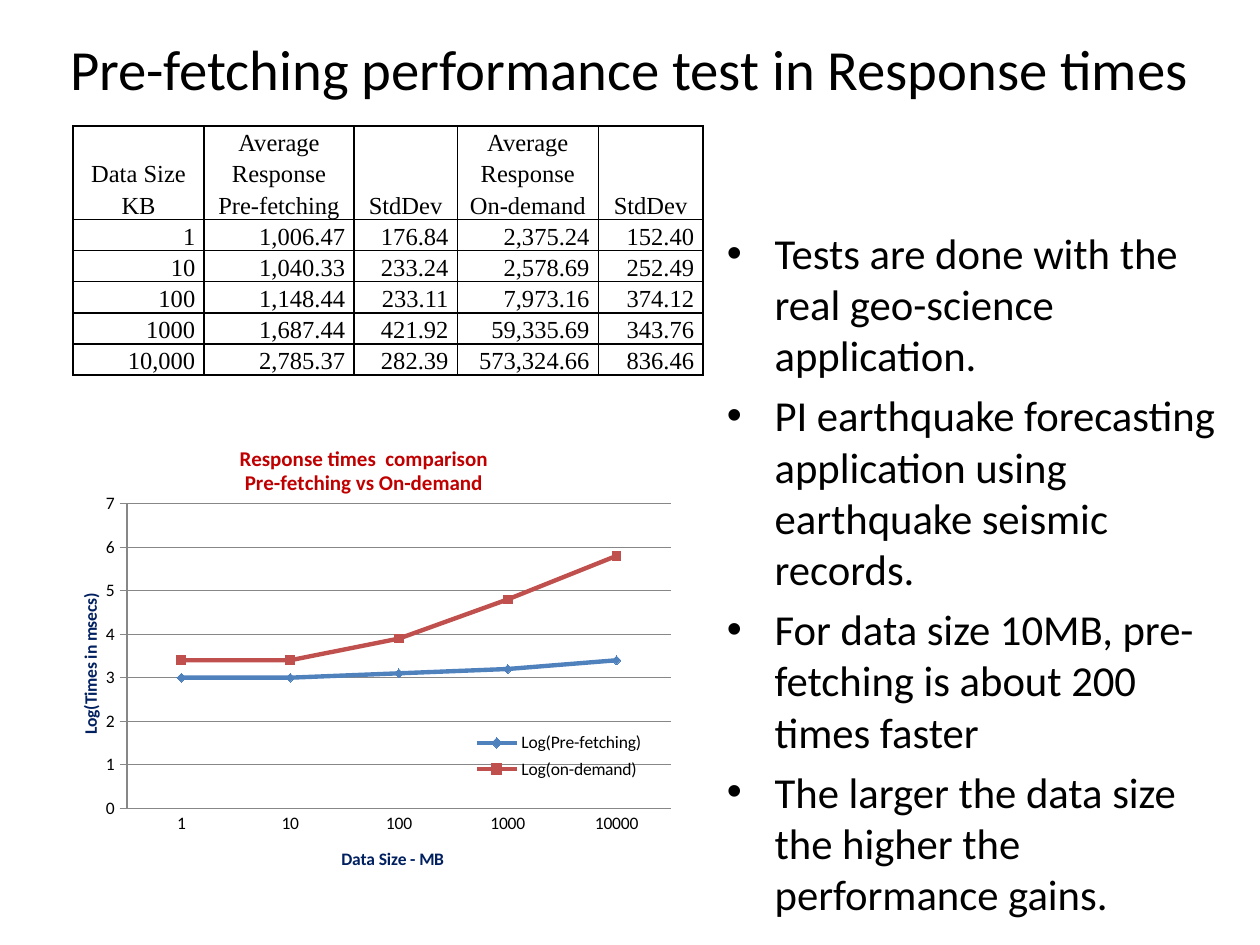
"""Build the slide on pre-fetching response times."""
import lxml.etree
import pptx
import pptx.chart.data
import pptx.dml.color
import pptx.enum.chart
import pptx.enum.text
import pptx.oxml
import pptx.oxml.ns
import pptx.util

Inches, Pt = pptx.util.Inches, pptx.util.Pt
qn = pptx.oxml.ns.qn
ALIGN, ANCHOR = pptx.enum.text.PP_ALIGN, pptx.enum.text.MSO_ANCHOR
CHART = pptx.enum.chart

COLORS = {"text": "000000", "axis_title": "002060", "chart_title": "C00000", "grid": "878787"}
TITLE = "Pre-fetching performance test in Response times"
BULLETS = [
    "Tests are done with the real geo-science application.",
    "PI earthquake forecasting application using earthquake seismic records.",
    "For data size 10MB, pre-fetching is about 200 times faster",
    "The larger the data size the higher the performance gains.",
]
HEADER_ROWS = 2
ROWS = [
    ["Data Size", "Average\nResponse", "", "Average\nResponse", ""],
    ["KB", "Pre-fetching", "StdDev", "On-demand", "StdDev"],
    ["1", "1,006.47", "176.84", "2,375.24", "152.40"],
    ["10", "1,040.33", "233.24", "2,578.69", "252.49"],
    ["100", "1,148.44", "233.11", "7,973.16", "374.12"],
    ["1000", "1,687.44", "421.92", "59,335.69", "343.76"],
    ["10,000", "2,785.37", "282.39", "573,324.66", "836.46"],
]
COLUMN_WIDTHS = [1.04, 1.19, 0.82, 1.12, 0.83]
CHART_TITLE = "Response times  comparison\nPre-fetching vs On-demand"
CATEGORIES = ["1", "10", "100", "1000", "10000"]
MARKERS = CHART.XL_MARKER_STYLE
SERIES = [
    ("Log(Pre-fetching)", [3, 3, 3.1, 3.2, 3.4], "4F81BD", MARKERS.DIAMOND),
    ("Log(on-demand)", [3.4, 3.4, 3.9, 4.8, 5.8], "C0504D", MARKERS.SQUARE),
]


def apply(target, values):
    for name, value in values.items():
        setattr(target, name, value)


def rgb(color):
    return pptx.dml.color.RGBColor.from_string(color)


def style_font(font, size, color=COLORS["text"], name="Calibri", bold=False):
    apply(font, {"size": Pt(size), "name": name, "bold": bold})
    font.color.rgb = rgb(color)


def add_title(page):
    box = page.shapes.title
    apply(box, {"left": Inches(0.33), "top": Inches(0.08), "width": Inches(9.33), "height": Inches(0.92)})
    frame = box.text_frame
    apply(frame, {"text": TITLE, "vertical_anchor": ANCHOR.MIDDLE, "word_wrap": True})
    frame.paragraphs[0].alignment = ALIGN.CENTER
    style_font(frame.paragraphs[0].runs[0].font, 32.4)


def add_bullets(page):
    box = page.shapes.add_textbox(Inches(5.67), Inches(1.75), Inches(4.17), Inches(4.95))
    frame = box.text_frame
    apply(frame, {"text": "\n".join(BULLETS), "word_wrap": True})
    for para in frame.paragraphs:
        para.space_before = Pt(5)
        style_font(para.runs[0].font, 24.4)
        properties = para._p.get_or_add_pPr()
        properties.set("marL", str(Inches(0.38)))
        properties.set("indent", str(-Inches(0.38)))
        lxml.etree.SubElement(properties, qn("a:buFont"), typeface="Arial")
        lxml.etree.SubElement(properties, qn("a:buChar"), char="•")


def set_borders(cell, open_sides):
    properties = cell._tc.get_or_add_tcPr()
    for side in "LRTB":
        line = lxml.etree.SubElement(properties, qn(f"a:ln{side}"), w=str(Pt(1)))
        if side in open_sides:
            lxml.etree.SubElement(line, qn("a:noFill"))
        else:
            fill = lxml.etree.SubElement(line, qn("a:solidFill"))
            lxml.etree.SubElement(fill, qn("a:srgbClr"), val=COLORS["text"])


def add_results_table(page):
    frame = page.shapes.add_table(len(ROWS), len(COLUMN_WIDTHS), Inches(0.58), Inches(1), Inches(5), Inches(1.54))
    table = frame.table
    apply(table, {"first_row": False, "horz_banding": False})
    for column, width in zip(table.columns, COLUMN_WIDTHS):
        column.width = Inches(width)
    for row_index, texts in enumerate(ROWS):
        table.rows[row_index].height = Inches(0.22)
        for column_index, text in enumerate(texts):
            cell = table.cell(row_index, column_index)
            set_borders(cell, {0: "B", 1: "T"}.get(row_index, ""))
            cell.fill.background()
            apply(cell, {
                "text": text, "vertical_anchor": ANCHOR.BOTTOM,
                "margin_left": Inches(0.07), "margin_right": Inches(0.07),
                "margin_top": 0, "margin_bottom": 0,
            })
            for para in cell.text_frame.paragraphs:
                alignment = ALIGN.CENTER if row_index < HEADER_ROWS else ALIGN.RIGHT
                apply(para, {"alignment": alignment, "line_spacing": 1.15})
                style_font(para.font, 14, name="Times New Roman")
                for span in para.runs:
                    style_font(span.font, 14, name="Times New Roman")


def place(element, x, y, w=None, h=None, inner=False):
    layout = element.find(qn("c:layout"))
    if layout is None:
        layout = pptx.oxml.parse_xml(f'<c:layout {pptx.oxml.ns.nsdecls("c")}/>')
        overlay = element.find(qn("c:overlay"))
        if overlay is None:
            element.insert(0, layout)
        else:
            overlay.addprevious(layout)
    manual = lxml.etree.SubElement(layout, qn("c:manualLayout"))
    values = {"xMode": "edge", "yMode": "edge", "x": x, "y": y, "w": w, "h": h}
    if inner:
        values = {"layoutTarget": "inner", **values}
    for name, value in values.items():
        if value is not None:
            lxml.etree.SubElement(manual, qn(f"c:{name}"), val=str(value))


def write_chart_title(title, text, size, color, x, y):
    title.text_frame.text = text
    for para in title.text_frame.paragraphs:
        style_font(para.runs[0].font, size, color, bold=True)
    place(title._element, x, y)


def add_response_chart(page):
    data = pptx.chart.data.CategoryChartData()
    data.categories = CATEGORIES
    for name, values, _, _ in SERIES:
        data.add_series(name, values)
    frame = page.shapes.add_chart(
        CHART.XL_CHART_TYPE.LINE_MARKERS, Inches(0.5), Inches(3.42), Inches(5.08), Inches(3.61), data)
    chart = frame.chart
    style_font(chart.font, 10)
    apply(chart, {"has_title": True, "has_legend": True})
    write_chart_title(chart.chart_title, CHART_TITLE, 12, COLORS["chart_title"], 0.27, 0.02)
    apply(chart.legend, {"position": CHART.XL_LEGEND_POSITION.RIGHT, "include_in_layout": False})
    place(chart.legend._element, 0.63, 0.65, 0.29, 0.13)

    ticks = CHART.XL_TICK_MARK
    axes = [
        (chart.category_axis, "Data Size - MB", ticks.NONE, 0.43, 0.91),
        (chart.value_axis, "Log(Times in msecs)", ticks.CROSS, 0.02, 0.35),
    ]
    for axis, text, tick, x, y in axes:
        apply(axis, {"major_tick_mark": tick, "minor_tick_mark": ticks.NONE})
        axis.format.line.color.rgb = rgb(COLORS["grid"])
        write_chart_title(axis.axis_title, text, 10, COLORS["axis_title"], x, y)
    apply(chart.value_axis, {
        "minimum_scale": 0, "maximum_scale": 7, "major_unit": 1, "has_major_gridlines": True})
    chart.value_axis.major_gridlines.format.line.color.rgb = rgb(COLORS["grid"])

    plot = chart.plots[0]
    plot.vary_by_categories = False
    for series, (_, _, color, marker) in zip(plot.series, SERIES):
        series.smooth = False
        series.format.line.width = Pt(2.5)
        series.format.line.color.rgb = rgb(color)
        apply(series.marker, {"style": marker, "size": 5})
        series.marker.format.fill.solid()
        series.marker.format.fill.fore_color.rgb = rgb(color)
        series.marker.format.line.color.rgb = rgb(color)
    place(chart._chartSpace.chart.plotArea, 0.1, 0.16, 0.85, 0.67, inner=True)


def main():
    deck = pptx.Presentation()
    apply(deck, {"slide_width": Inches(10), "slide_height": Inches(7.5)})
    page = deck.slides.add_slide(deck.slide_layouts[5])
    add_results_table(page)
    add_response_chart(page)
    add_bullets(page)
    add_title(page)
    deck.save("out.pptx")


if __name__ == "__main__":
    main()
